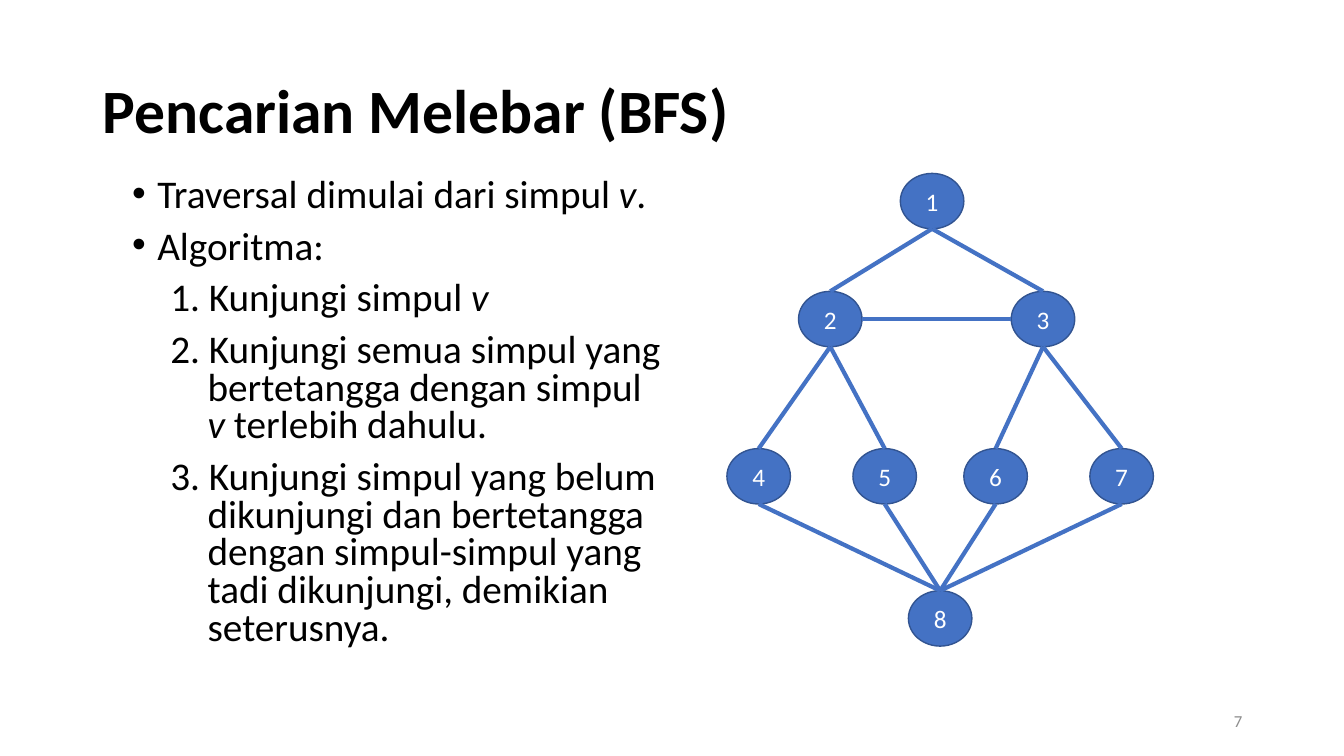
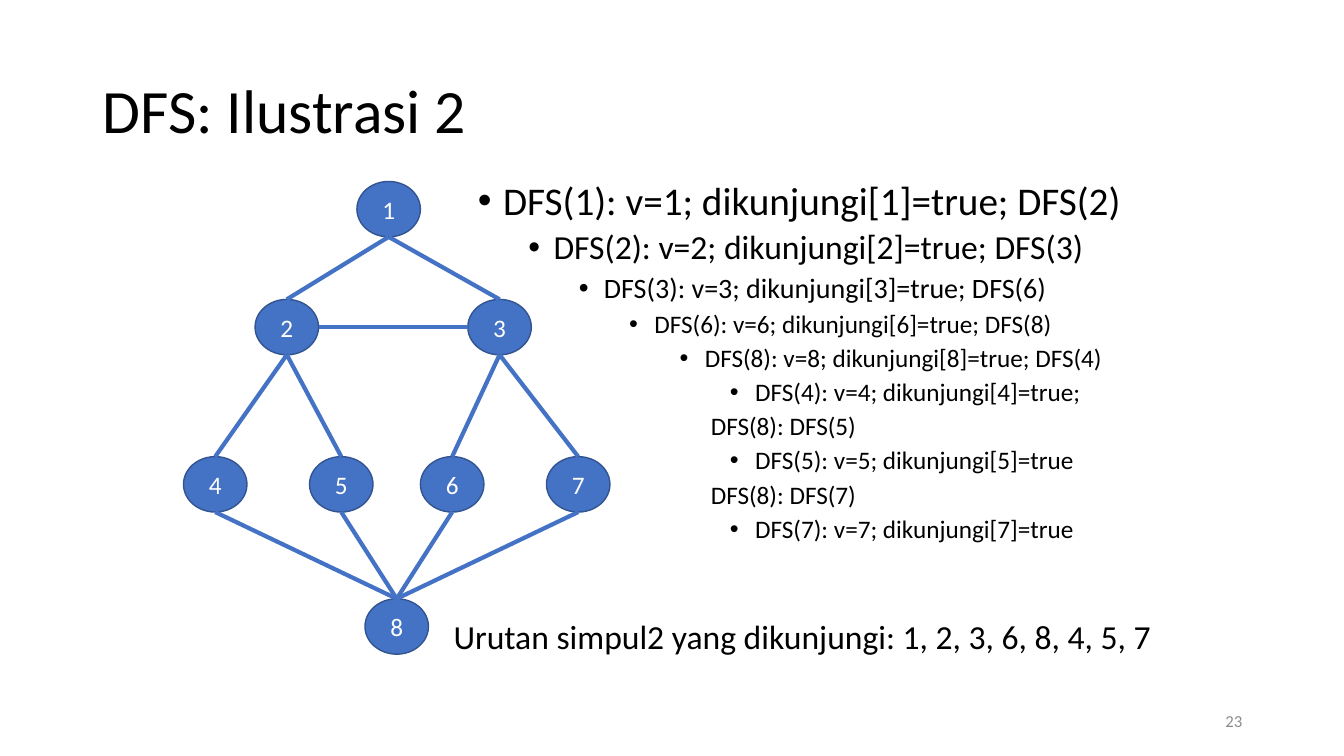
from lxml.etree import SubElement
from pptx import Presentation
from pptx.dml.color import RGBColor
from pptx.enum.shapes import MSO_CONNECTOR, MSO_SHAPE
from pptx.enum.text import MSO_ANCHOR, MSO_AUTO_SIZE, PP_ALIGN
from pptx.oxml.ns import qn
from pptx.util import Inches, Pt

ELLIPSE = MSO_SHAPE.OVAL
STRAIGHT = MSO_CONNECTOR.STRAIGHT
MIDDLE, TOP = MSO_ANCHOR.MIDDLE, MSO_ANCHOR.TOP
LEFT, CENTER, RIGHT = PP_ALIGN.LEFT, PP_ALIGN.CENTER, PP_ALIGN.RIGHT
NO_FIT = MSO_AUTO_SIZE.NONE

FONT = "Calibri"
BLACK, WHITE, GRAY = "000000", "FFFFFF", "8C8C8C"
BLUE, DARK_BLUE = "4472C4", "325491"

NODE_W, NODE_H = 0.63, 0.55
NODES = {
    1: (1.72, 0), 2: (0.71, 1.17), 3: (2.82, 1.17),
    4: (0, 2.73), 5: (1.25, 2.73), 6: (2.35, 2.73), 7: (3.6, 2.73),
    8: (1.8, 4.14),
}
EDGES = [(2, 4), (2, 5), (3, 6), (3, 7), (1, 2), (1, 3),
         (6, 8), (7, 8), (4, 8), (5, 8), (2, 3)]
SITES = {
    0: (NODE_W / 2, 0),
    2: (0, NODE_H / 2),
    4: (NODE_W / 2, NODE_H),
    6: (NODE_W, NODE_H / 2),
}

LEVEL_SIZES = [28, 24, 20, 18, 18, 18]
STEP_MARGIN, STEP_INDENT = 0.75, -0.37
RETURN_MARGIN = 2.31

BFS_LINES = [
    (0, True, ["Traversal dimulai dari simpul ", "v", "."]),
    (0, True, ["Algoritma:"]),
    (0, False, ["1. Kunjungi simpul ", "v"]),
    (0, False, ["2. Kunjungi semua simpul yang bertetangga dengan simpul ",
                "v", " terlebih dahulu."]),
    (0, False, ["3. Kunjungi simpul yang belum dikunjungi dan bertetangga dengan "
                "simpul-simpul yang tadi dikunjungi, demikian seterusnya."]),
]
DFS_LINES = [
    (0, True, ["DFS(1): v=1; dikunjungi[1]=true; DFS(2)"]),
    (1, True, ["DFS(2): v=2; dikunjungi[2]=true; DFS(3)"]),
    (2, True, ["DFS(3): v=3; dikunjungi[3]=true; DFS(6)"]),
    (3, True, ["DFS(6): v=6; dikunjungi[6]=true; DFS(8)"]),
    (4, True, ["DFS(8): v=8; dikunjungi[8]=true; DFS(4)"]),
    (5, True, ["DFS(4): v=4; dikunjungi[4]=true;"]),
    (4, False, ["DFS(8): DFS(5)"]),
    (5, True, ["DFS(5): v=5; dikunjungi[5]=true"]),
    (4, False, ["DFS(8): DFS(7)"]),
    (5, True, ["DFS(7): v=7; dikunjungi[7]=true"]),
]
PAGES = [
    {"title": "Pencarian Melebar (BFS)", "bold": True, "number": "7",
     "lines": BFS_LINES, "body": (1.21, 1.72, 5.46, 4.95), "spacing": 0.8,
     "graph": (7.21, 1.72), "order": None},
    {"title": "DFS: Ilustrasi 2", "bold": False, "number": "23",
     "lines": DFS_LINES, "body": (4.64, 1.75, 7.5, 4.95), "spacing": 0.9,
     "graph": (1.82, 1.8),
     "order": "Urutan simpul2 yang dikunjungi: 1, 2, 3, 6, 8, 4, 5, 7"},
]


def rgb(value):
    return RGBColor.from_string(value)


def add_run(paragraph, text, size, color=BLACK, bold=False, italic=False):
    run = paragraph.add_run()
    run.text = text
    run.font.name = FONT
    run.font.size = Pt(size)
    run.font.color.rgb = rgb(color)
    run.font.bold = bold
    run.font.italic = italic


deck = Presentation()
deck.slide_width = Inches(13.33)
deck.slide_height = Inches(7.5)
layout = deck.slide_layouts[1]
heading = layout.placeholders[0]
heading.left, heading.top = Inches(0.92), Inches(0.4)
heading.width, heading.height = Inches(11.5), Inches(1.45)
heading.text_frame.vertical_anchor = MIDDLE

for page in PAGES:
    slide = deck.slides.add_slide(layout)

    title = slide.shapes.title.text_frame
    title.auto_size = NO_FIT
    title.paragraphs[0].alignment = LEFT
    title.paragraphs[0].line_spacing = 0.9
    add_run(title.paragraphs[0], page["title"], 44, bold=page["bold"])

    body = slide.placeholders[1]
    body.left, body.top, body.width, body.height = map(Inches, page["body"])
    explanation = body.text_frame
    explanation.auto_size = NO_FIT
    explanation.vertical_anchor = TOP
    for index, (level, bulleted, parts) in enumerate(page["lines"]):
        line = explanation.add_paragraph() if index else explanation.paragraphs[0]
        line.level = level
        line.alignment = LEFT
        line.line_spacing = page["spacing"]
        line.space_before = Pt(5 if level else 10)
        if bulleted:
            margin, indent = 0.25 + 0.5 * level, -0.25
        elif level:
            margin, indent = RETURN_MARGIN, 0
        else:
            margin, indent = STEP_MARGIN, STEP_INDENT
        properties = line._p.get_or_add_pPr()
        properties.set("marL", str(Inches(margin)))
        properties.set("indent", str(Inches(indent)))
        if bulleted:
            SubElement(properties, qn("a:buFont"), typeface="Arial")
            SubElement(properties, qn("a:buChar"), char="•")
        else:
            SubElement(properties, qn("a:buNone"))
        for position, part in enumerate(parts):
            add_run(line, part, LEVEL_SIZES[level], italic=position % 2 == 1)

    graph_left, graph_top = page["graph"]
    nodes = {}
    for label, (x, y) in NODES.items():
        node = slide.shapes.add_shape(
            ELLIPSE, Inches(graph_left + x), Inches(graph_top + y),
            Inches(NODE_W), Inches(NODE_H))
        node.shadow.inherit = False
        node.fill.solid()
        node.fill.fore_color.rgb = rgb(BLUE)
        node.line.color.rgb = rgb(DARK_BLUE)
        node.line.width = Pt(1)
        node.text_frame.vertical_anchor = MIDDLE
        node.text_frame.paragraphs[0].alignment = CENTER
        add_run(node.text_frame.paragraphs[0], str(label), 18, WHITE)
        nodes[label] = node

    for start, end in EDGES:
        same_row = NODES[start][1] == NODES[end][1]
        start_site, end_site = (6, 2) if same_row else (4, 0)
        ends = []
        for label, site in ((start, start_site), (end, end_site)):
            ends += [Inches(graph_left + NODES[label][0] + SITES[site][0]),
                     Inches(graph_top + NODES[label][1] + SITES[site][1])]
        edge = slide.shapes.add_connector(STRAIGHT, *ends)
        edge.line.color.rgb = rgb(BLUE)
        edge.line.width = Pt(3)
        SubElement(edge._element.spPr, qn("a:effectLst"))
        joints = edge._element.nvCxnSpPr.cNvCxnSpPr
        SubElement(joints, qn("a:stCxn"),
                   id=str(nodes[start].shape_id), idx=str(start_site))
        SubElement(joints, qn("a:endCxn"),
                   id=str(nodes[end].shape_id), idx=str(end_site))

    number = slide.shapes.add_textbox(
        Inches(9.42), Inches(6.95), Inches(3), Inches(0.4)).text_frame
    number.word_wrap = True
    number.vertical_anchor = MIDDLE
    number.paragraphs[0].alignment = RIGHT
    add_run(number.paragraphs[0], page["number"], 12, GRAY)

    if page["order"]:
        order = slide.shapes.add_textbox(
            Inches(4.4), Inches(6.06), Inches(7.34), Inches(0.5)).text_frame
        order.word_wrap = False
        add_run(order.paragraphs[0], page["order"], 24)

deck.save("out.pptx")
